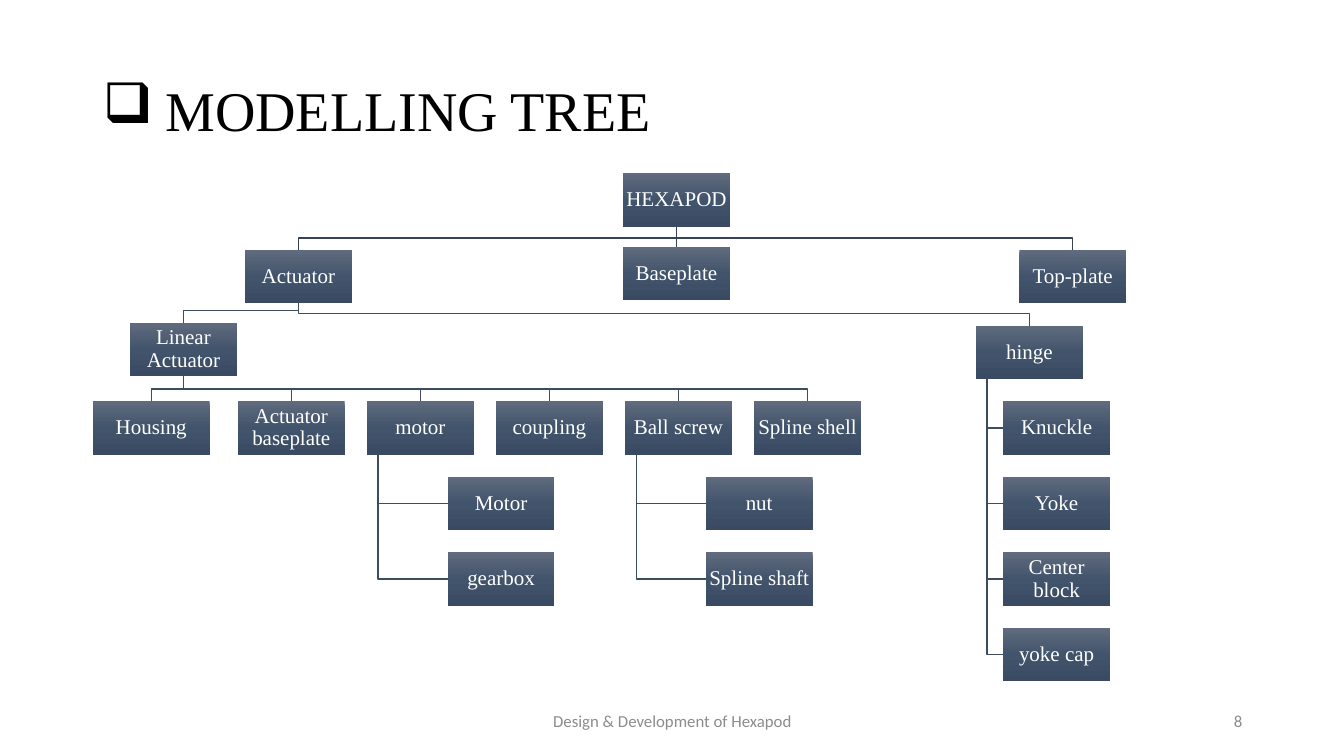
import copy

import pptx
import pptx.dml.color
import pptx.enum.shapes
import pptx.enum.text
import pptx.oxml
import pptx.oxml.ns
import pptx.util

Inches = pptx.util.Inches
ALIGN = pptx.enum.text.PP_ALIGN

BOX_WIDTH, BOX_HEIGHT = 1.06, 0.53
ROW_TOPS = [1.72, 2.48, 3.23, 3.98, 4.73, 5.48, 6.23]
COLUMN_STEP = 1.28
BEND_RISE = 0.12   # height of a branch's crossbar above the child box
STEM_INSET = 0.11  # distance of a hanging stem from the parent's left edge
SERIF = "Times New Roman"
GRADIENT = [(0, "606B7D"), (0.5, "42546C"), (1, "394A62")]
TOP_LINE, LINE = "364355", "3E4C60"


def color(value):
    return pptx.dml.color.RGBColor.from_string(value)


def style(para, font_name, size, value, align):
    para.alignment = align
    para.font.name = font_name
    para.font.size = pptx.util.Pt(size)
    para.font.color.rgb = color(value)


def set_title(page, text):
    title = page.shapes.title
    title.left, title.top = Inches(0.92), Inches(0.4)
    title.width, title.height = Inches(11.5), Inches(1.45)
    title.text_frame.text = text
    title.text_frame.vertical_anchor = pptx.enum.text.MSO_ANCHOR.MIDDLE
    para = title.text_frame.paragraphs[0]
    properties = para._p.get_or_add_pPr()
    properties.set("marL", str(Inches(0.62)))
    properties.set("indent", str(Inches(-0.62)))
    bullet = pptx.oxml.parse_xml(
        f'<a:buChar {pptx.oxml.ns.nsdecls("a")} char="❑"/>')
    properties.append(bullet)
    para.line_spacing = 0.9
    style(para, SERIF, 40, "000000", ALIGN.LEFT)


def add_footer(page, text, left, width, align):
    footer = page.shapes.add_textbox(
        Inches(left), Inches(6.95), Inches(width), Inches(0.4))
    frame = footer.text_frame
    frame.word_wrap = True
    frame.vertical_anchor = pptx.enum.text.MSO_ANCHOR.MIDDLE
    frame.text = text
    style(frame.paragraphs[0], "Calibri", 12, "8C8C8C", align)


def fill_gradient(box):
    box.fill.gradient()
    stop_list = box._element.spPr.find(".//" + pptx.oxml.ns.qn("a:gsLst"))
    stop_list.insert(1, copy.deepcopy(stop_list[0]))
    for stop, (position, value) in zip(box.fill.gradient_stops, GRADIENT):
        stop.position = position
        stop.color.rgb = color(value)
    box.fill.gradient_angle = 270


def add_box(page, text, left, top, width=BOX_WIDTH):
    box = page.shapes.add_shape(
        pptx.enum.shapes.MSO_SHAPE.RECTANGLE,
        Inches(left), Inches(top), Inches(width), Inches(BOX_HEIGHT))
    box.shadow.inherit = False
    fill_gradient(box)
    box.line.fill.background()
    frame = box.text_frame
    frame.word_wrap = True
    frame.vertical_anchor = pptx.enum.text.MSO_ANCHOR.MIDDLE
    frame.margin_left = frame.margin_right = Inches(0.01)
    frame.margin_top = frame.margin_bottom = Inches(0.01)
    frame.text = text
    para = frame.paragraphs[0]
    para.line_spacing = 0.9
    style(para, SERIF, 15, "FFFFFF", ALIGN.CENTER)
    return box


def add_path(page, points, value):
    builder = page.shapes.build_freeform(*points[0])
    builder.add_line_segments(points[1:], close=False)
    path = builder.convert_to_shape()
    path.shadow.inherit = False
    path.fill.background()
    path.line.color.rgb = color(value)
    path.line.width = pptx.util.Pt(1)


def add_branches(page, parent, children, value=LINE):
    """Link the parent's bottom to each child's top with a stepped line."""
    start = parent.left + parent.width // 2
    for child in children:
        end = child.left + child.width // 2
        bend = child.top - Inches(BEND_RISE)
        add_path(page, [(start, parent.top + parent.height), (start, bend),
                        (end, bend), (end, child.top)], value)


def add_hanging(page, parent, names, left):
    """Stack child boxes below the parent, joined to one stem."""
    stem = parent.left + Inches(STEM_INSET)
    for name, top in zip(names, ROW_TOPS[-4:] if len(names) == 4 else ROW_TOPS[4:]):
        child = add_box(page, name, left, top)
        middle = child.top + child.height // 2
        add_path(page, [(stem, parent.top + parent.height), (stem, middle),
                        (child.left, middle)], LINE)


def add_straight(page, upper, lower, value):
    link = page.shapes.add_connector(
        pptx.enum.shapes.MSO_CONNECTOR.STRAIGHT, 0, 0, 0, 0)
    link.begin_connect(upper, 2)
    link.end_connect(lower, 0)
    link.line.color.rgb = color(value)
    link.line.width = pptx.util.Pt(1)
    properties = link._element.spPr
    properties.append(pptx.oxml.parse_xml(
        f'<a:effectLst {pptx.oxml.ns.nsdecls("a")}/>'))


def add_tree(page):
    hexapod = add_box(page, "HEXAPOD", 6.18, ROW_TOPS[0])
    actuator = add_box(page, "Actuator", 2.43, ROW_TOPS[1])
    baseplate = add_box(page, "Baseplate", 6.18, 2.45)
    top_plate = add_box(page, "Top-plate", 10.11, ROW_TOPS[1])
    add_branches(page, hexapod, [actuator, top_plate], TOP_LINE)
    add_straight(page, hexapod, baseplate, TOP_LINE)

    linear_actuator = add_box(page, "Linear Actuator", 1.29, 3.2)
    hinge = add_box(page, "hinge", 9.68, ROW_TOPS[2])
    add_branches(page, actuator, [linear_actuator, hinge])

    parts = [add_box(page, "Housing", 0.92, ROW_TOPS[3], 1.16)]
    names = ["Actuator baseplate", "motor", "coupling", "Ball screw", "Spline shell"]
    for column, name in enumerate(names):
        parts.append(add_box(page, name, 2.36 + column * COLUMN_STEP, ROW_TOPS[3]))
    add_branches(page, linear_actuator, parts)

    add_hanging(page, parts[2], ["Motor", "gearbox"], 4.44)
    add_hanging(page, parts[4], ["nut", "Spline shaft"], 7)
    add_hanging(page, hinge, ["Knuckle", "Yoke", "Center block", "yoke cap"], 9.95)


def main():
    deck = pptx.Presentation()
    deck.slide_width, deck.slide_height = Inches(13.33), Inches(7.5)
    page = deck.slides.add_slide(deck.slide_layouts[5])
    set_title(page, "MODELLING TREE")
    add_footer(page, "Design & Development of Hexapod", 4.42, 4.5, ALIGN.CENTER)
    add_footer(page, "8", 9.42, 3, ALIGN.RIGHT)
    add_tree(page)
    deck.save("out.pptx")


if __name__ == "__main__":
    main()
